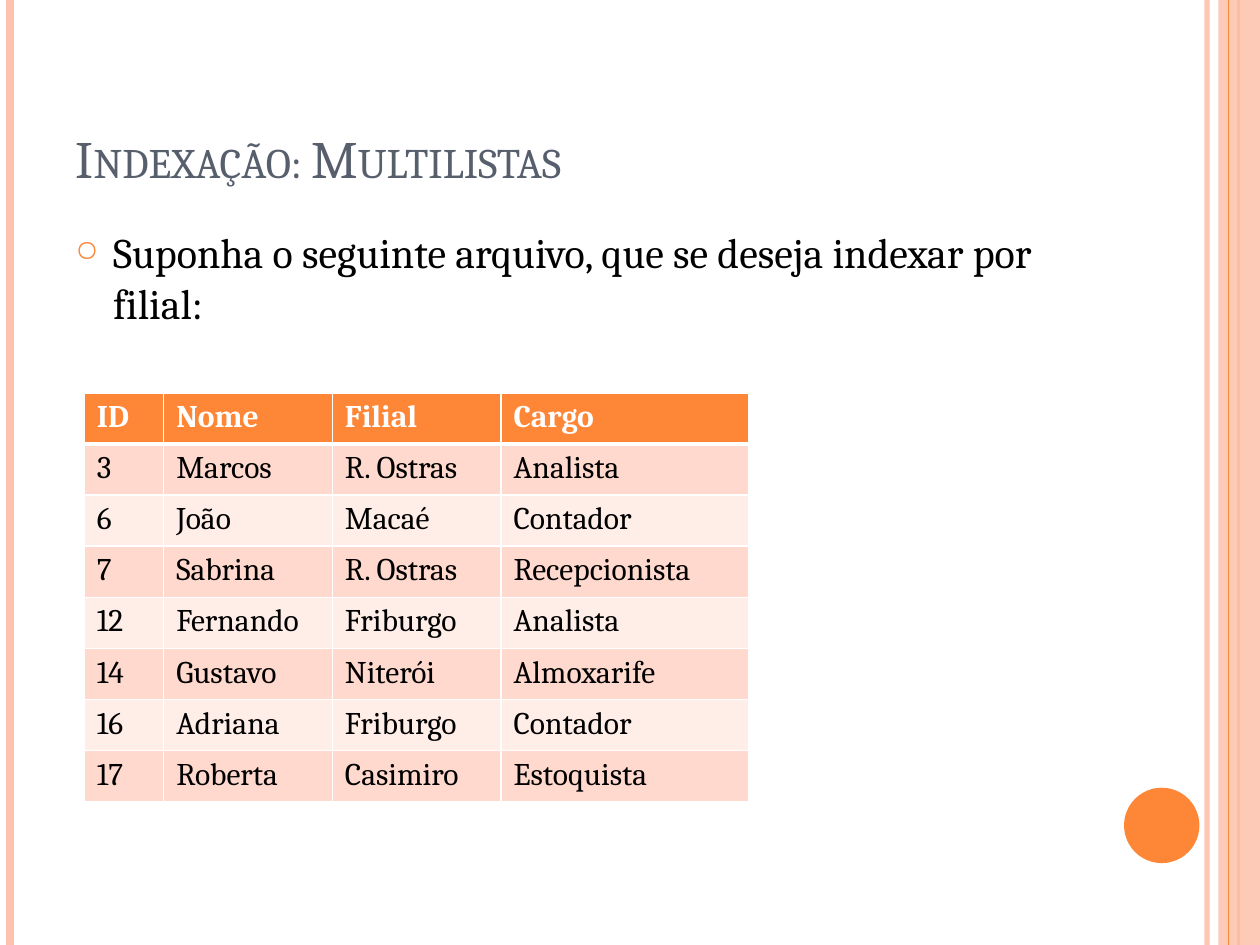
"""Build a slide that shows an employee file to be indexed by branch."""
from dataclasses import dataclass

from lxml import etree
from pptx import Presentation
from pptx.dml.color import RGBColor
from pptx.enum.shapes import MSO_CONNECTOR, MSO_SHAPE
from pptx.enum.text import MSO_ANCHOR
from pptx.oxml.ns import qn
from pptx.util import Cm, Pt

STRAIGHT = MSO_CONNECTOR.STRAIGHT
RECTANGLE, OVAL = MSO_SHAPE.RECTANGLE, MSO_SHAPE.OVAL
TOP, BOTTOM = MSO_ANCHOR.TOP, MSO_ANCHOR.BOTTOM

FONT = "Cambria"
COLORS = {
    "accent": "FE8637",
    "band": "FEC3AE",
    "title": "575F6D",
    "text": "000000",
    "white": "FFFFFF",
    "odd_row": "FFD9CE",
    "even_row": "FFEDE8",
}
SLIDE_WIDTH, SLIDE_HEIGHT = 25.4, 19.05
COLUMN_WIDTHS = (1.6, 3.4, 3.4, 5.0)
ROW_HEIGHT = 1.03
EMPLOYEES = (
    ("ID", "Nome", "Filial", "Cargo"),
    ("3", "Marcos", "R. Ostras", "Analista"),
    ("6", "João", "Macaé", "Contador"),
    ("7", "Sabrina", "R. Ostras", "Recepcionista"),
    ("12", "Fernando", "Friburgo", "Analista"),
    ("14", "Gustavo", "Niterói", "Almoxarife"),
    ("16", "Adriana", "Friburgo", "Contador"),
    ("17", "Roberta", "Casimiro", "Estoquista"),
)


@dataclass(frozen=True)
class Stripe:
    """A vertical line over the full slide height."""
    x: float
    width: float
    color: str
    opacity: int = 100


@dataclass(frozen=True)
class Panel:
    """A filled shape without outline."""
    kind: int
    left: float
    top: float
    width: float
    height: float
    color: str
    opacity: int = 100


DECORATION = (
    Stripe(24.33, 3, "band", 93),
    Stripe(0.2, 4.5, "band"),
    Stripe(24.97, 1.5, "accent"),
    Panel(RECTANGLE, 24.56, 0, 0.84, SLIDE_HEIGHT, "band", 87),
    Stripe(24.77, 0.75, "accent"),
    Panel(OVAL, 22.66, 15.88, 1.52, 1.52, "accent"),
)


def rgb(name: str) -> RGBColor:
    """Return a named colour."""
    return RGBColor.from_string(COLORS[name])


def add_child(parent, tag: str, **attributes: str):
    """Append an XML element with attributes."""
    return etree.SubElement(parent, qn(tag), attributes)


def set_opacity(shape, opacity: int) -> None:
    """Make the colours of a shape partly transparent."""
    if opacity < 100:
        for color in shape._element.spPr.iter(qn("a:srgbClr")):
            add_child(color, "a:alpha", val=str(opacity * 1000))


def add_stripe(slide, stripe: Stripe) -> None:
    """Draw a vertical stripe."""
    line = slide.shapes.add_connector(
        STRAIGHT, Cm(stripe.x), Cm(0), Cm(stripe.x), Cm(SLIDE_HEIGHT))
    line.line.color.rgb = rgb(stripe.color)
    line.line.width = Pt(stripe.width)
    set_opacity(line, stripe.opacity)
    add_child(line._element.spPr, "a:effectLst")


def add_panel(slide, panel: Panel) -> None:
    """Draw a filled panel."""
    shape = slide.shapes.add_shape(
        panel.kind, Cm(panel.left), Cm(panel.top), Cm(panel.width), Cm(panel.height))
    shape.shadow.inherit = False
    shape.fill.solid()
    shape.fill.fore_color.rgb = rgb(panel.color)
    shape.line.fill.background()
    set_opacity(shape, panel.opacity)


def write_text(text_frame, text: str, *, size: float, color: str, bold: bool = False,
               small_caps: bool = False, bullet: str = ""):
    """Write one formatted paragraph, with an optional bullet."""
    paragraph = text_frame.paragraphs[0]
    run = paragraph.add_run()
    run.text = text
    run.font.name = FONT
    run.font.size = Pt(size)
    run.font.bold = bold
    run.font.color.rgb = rgb(color)
    if small_caps:
        run.font._element.set("cap", "small")
    if bullet:
        paragraph.space_before = Pt(6)
        properties = paragraph._p.get_or_add_pPr()
        properties.set("marL", str(Cm(0.76)))
        properties.set("indent", str(-Cm(0.76)))
        bullet_color = add_child(properties, "a:buClr")
        add_child(bullet_color, "a:srgbClr", val=COLORS["accent"])
        add_child(properties, "a:buSzPct", val="70000")
        add_child(properties, "a:buChar", char=bullet)


def add_text(slide, text: str, top: float, height: float, anchor, **text_format) -> None:
    """Add a text box in the main column."""
    box = slide.shapes.add_textbox(Cm(1.27), Cm(top), Cm(20.75), Cm(height))
    box.text_frame.word_wrap = True
    box.text_frame.vertical_anchor = anchor
    write_text(box.text_frame, text, **text_format)


def set_borders(cell, bottom_width: float) -> None:
    """Give a cell white borders."""
    properties = cell._tc.get_or_add_tcPr()
    widths = {"a:lnL": 1, "a:lnR": 1, "a:lnT": 1, "a:lnB": bottom_width}
    for tag, width in widths.items():
        border = add_child(properties, tag, w=str(Pt(width)))
        fill = add_child(border, "a:solidFill")
        add_child(fill, "a:srgbClr", val=COLORS["white"])


def add_employee_table(slide) -> None:
    """Draw the employee table with a header and banded rows."""
    table = slide.shapes.add_table(
        len(EMPLOYEES), len(COLUMN_WIDTHS), Cm(1.7), Cm(7.92),
        Cm(sum(COLUMN_WIDTHS)), Cm(ROW_HEIGHT * len(EMPLOYEES))).table
    for column, width in zip(table.columns, COLUMN_WIDTHS):
        column.width = Cm(width)
    for row_index, values in enumerate(EMPLOYEES):
        table.rows[row_index].height = Cm(ROW_HEIGHT)
        header = row_index == 0
        fill = "accent" if header else "odd_row" if row_index % 2 else "even_row"
        for column_index, value in enumerate(values):
            cell = table.cell(row_index, column_index)
            set_borders(cell, 3 if header else 1)
            cell.fill.solid()
            cell.fill.fore_color.rgb = rgb(fill)
            write_text(cell.text_frame, value, size=18, bold=header,
                       color="white" if header else "text")


def main() -> None:
    """Build and save the presentation."""
    presentation = Presentation()
    presentation.slide_width = Cm(SLIDE_WIDTH)
    presentation.slide_height = Cm(SLIDE_HEIGHT)
    slide = presentation.slides.add_slide(presentation.slide_layouts[6])
    for item in DECORATION:
        if isinstance(item, Stripe):
            add_stripe(slide, item)
        else:
            add_panel(slide, item)
    add_text(slide, "Indexação: Multilistas", 0.76, 3.18, BOTTOM,
             size=30, color="title", small_caps=True)
    add_text(slide, "Suponha o seguinte arquivo, que se deseja indexar por filial:",
             4.45, 2.87, TOP, size=24, color="text", bullet="○")
    add_employee_table(slide)
    presentation.save("out.pptx")


if __name__ == "__main__":
    main()
